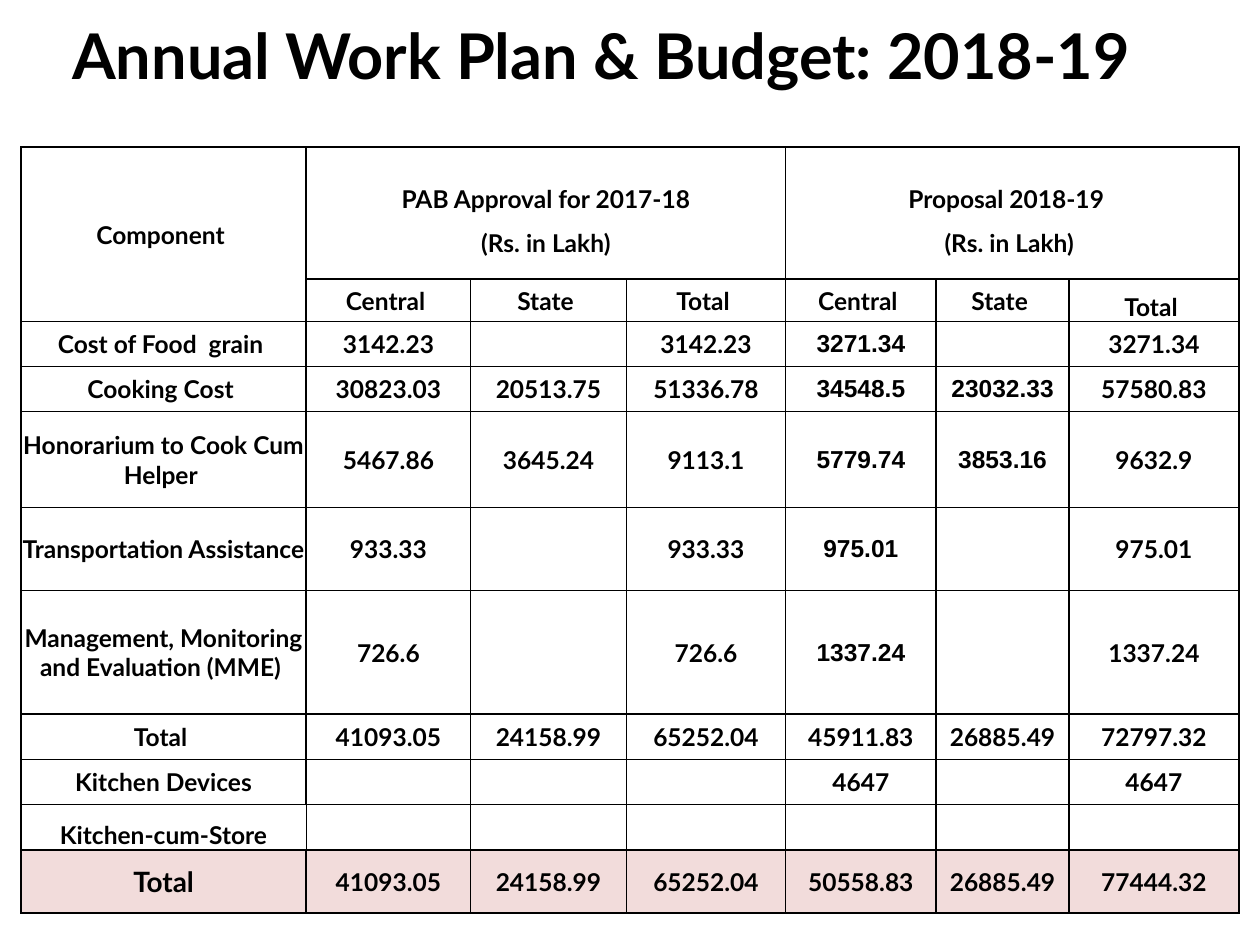
from lxml import etree
from pptx import Presentation
from pptx.dml.color import RGBColor
from pptx.enum.text import MSO_ANCHOR, PP_ALIGN
from pptx.oxml.ns import qn
from pptx.util import Pt

CENTER = PP_ALIGN.CENTER
MIDDLE, BOTTOM, TOP = MSO_ANCHOR.MIDDLE, MSO_ANCHOR.BOTTOM, MSO_ANCHOR.TOP
BLACK, PINK = "000000", "F2DCDB"
COLS = [163, 94, 89, 91, 86, 76, 97]
ROWS = [75.4, 24.3, 25.7, 25.7, 54.9, 47.4, 70.7, 25.9, 25.9, 25.9, 36]
DATA = [
    ["Component ", "PAB Approval for 2017-18\n (Rs. in Lakh) ", "", "",
     "Proposal 2018-19  \n(Rs. in Lakh) ", "", ""],
    ["", "Central ", "State ", "Total ", "Central ", "State ", "Total "],
    ["Cost of Food  grain ", "3142.23", "", "3142.23", "3271.34", "", "3271.34"],
    ["Cooking Cost ", "30823.03", "20513.75", "51336.78",
     "34548.5", "23032.33", "57580.83"],
    ["Honorarium to Cook Cum Helper ", "5467.86", "3645.24", "9113.1",
     "5779.74", "3853.16", "9632.9"],
    ["Transportation Assistance ", "933.33", "", "933.33", "975.01", "", "975.01"],
    ["Management, Monitoring  and Evaluation (MME)  ", "726.6", "", "726.6",
     "1337.24", "", "1337.24"],
    ["Total ", "41093.05", "24158.99", "65252.04",
     "45911.83", "26885.49", "72797.32"],
    ["Kitchen Devices", "", "", "", "4647", "", "4647"],
    ["Kitchen-cum-Store", "", "", "", "", "", ""],
    ["Total", "41093.05", "24158.99", "65252.04",
     "50558.83", "26885.49", "77444.32"],
]
LAST = len(ROWS) - 1
SPANS = [(0, 0, 1, 0), (0, 1, 0, 3), (0, 4, 0, 6)]
LOW = [(1, 6), (9, 0)]
THIN = {(8, col): "B" for col in (1, 2, 3)}
THIN |= {(9, 0): "R", (9, 1): "LTR", (9, 2): "LTR", (9, 3): "LT"}


def color(code):
    """Turn a hex string into a colour."""
    return RGBColor.from_string(code)


def write(frame, text, size, font="Lato", space=None):
    """Put bold centred text into a frame."""
    frame.text = text
    for para in frame.paragraphs:
        para.alignment = CENTER
        if space:
            para.line_spacing = space
        for run in para.runs:
            run.font.name = font
            run.font.size = Pt(size)
            run.font.bold = True
            run.font.color.rgb = color(BLACK)


def add_title(slide, text):
    """Add the heading above the table."""
    box = slide.shapes.add_textbox(Pt(0), Pt(6), Pt(696), Pt(52))
    frame = box.text_frame
    frame.word_wrap = True
    frame.vertical_anchor = TOP
    write(frame, text, 36)


def add_edges(cell, thin):
    """Draw the four borders of a cell, half as wide on the thin sides."""
    props = cell._tc.get_or_add_tcPr()
    for side in "LRTB":
        width = Pt(0.5 if side in thin else 1)
        line = etree.SubElement(props, qn(f"a:ln{side}"), w=str(width))
        fill = etree.SubElement(line, qn("a:solidFill"))
        etree.SubElement(fill, qn("a:srgbClr"), val=BLACK)


def fill_cell(cell, row, col):
    """Set the text, borders and fill of one cell."""
    cell.margin_left = cell.margin_right = cell.margin_top = Pt(0.7)
    cell.margin_bottom = Pt(0)
    cell.vertical_anchor = BOTTOM if (row, col) in LOW else MIDDLE
    if DATA[row][col]:
        font = "Arial" if 2 <= row <= 6 and col in (4, 5) else "Lato"
        size = 16 if (row, col) == (LAST, 0) else 14
        space = 1.5 if row == 0 and col else None
        write(cell.text_frame, DATA[row][col], size, font, space)
    add_edges(cell, THIN.get((row, col), ""))
    if row == LAST:
        cell.fill.solid()
        cell.fill.fore_color.rgb = color(PINK)
    else:
        cell.fill.background()


def add_budget(slide):
    """Add the budget table."""
    frame = slide.shapes.add_table(len(ROWS), len(COLS), Pt(12), Pt(84),
                                   Pt(sum(COLS)), Pt(sum(ROWS)))
    table = frame.table
    table.first_row = table.horz_banding = False
    for col, width in enumerate(COLS):
        table.columns[col].width = Pt(width)
    for row, height in enumerate(ROWS):
        table.rows[row].height = Pt(height)
        for col in range(len(COLS)):
            fill_cell(table.cell(row, col), row, col)
    for top, left, low, right in SPANS:
        table.cell(top, left).merge(table.cell(low, right))


def main():
    """Build and save the slide."""
    deck = Presentation()
    deck.slide_width, deck.slide_height = Pt(720), Pt(540)
    slide = deck.slides.add_slide(deck.slide_layouts[6])
    add_title(slide, "Annual Work Plan & Budget: 2018-19 ")
    add_budget(slide)
    deck.save("out.pptx")


if __name__ == "__main__":
    main()
